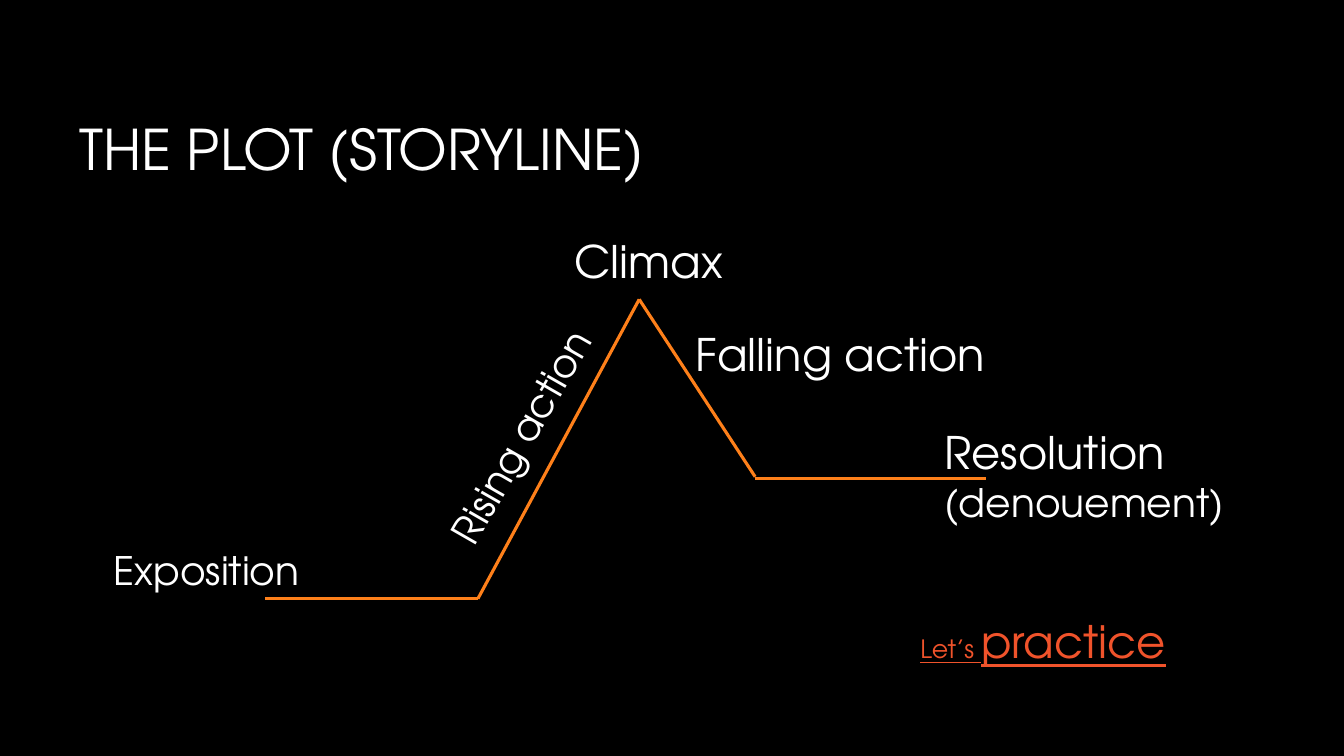
from lxml import etree
from pptx import Presentation
from pptx.dml.color import RGBColor
from pptx.enum.shapes import MSO_CONNECTOR as Conn
from pptx.enum.text import MSO_ANCHOR as Anchor
from pptx.oxml.ns import qn
from pptx.util import Inches, Pt

FONT = "TeX Gyre Adventor"
BLACK = RGBColor(0x00, 0x00, 0x00)
WHITE = RGBColor(0xFF, 0xFF, 0xFF)
ORANGE = RGBColor(0xFE, 0x80, 0x1A)
RED = RGBColor(0xF0, 0x53, 0x2B)


def add_text(slide, box, *runs, color=WHITE, line=None, turn=0,
             under=None, anchor=Anchor.TOP):
    """Add a one-paragraph text box; each run is (words, size)."""
    shape = slide.shapes.add_textbox(*map(Inches, box))
    shape.rotation = turn
    frame = shape.text_frame
    frame.word_wrap = True
    frame.vertical_anchor = anchor
    para = frame.paragraphs[0]
    para.line_spacing = line
    for words, size in runs:
        if words.startswith("\n"):
            para.add_line_break()
        run = para.add_run()
        run.text = words.strip("\n")
        font = run.font
        font.name, font.size = FONT, Pt(size)
        font.color.rgb = color
        font.underline = under


def add_line(slide, start, end):
    """Draw one stretch of the plot line."""
    line = slide.shapes.add_connector(
        Conn.STRAIGHT, *map(Inches, (*start, *end)))
    line.line.color.rgb = ORANGE
    line.line.width = Pt(2.25)
    etree.SubElement(line._element.spPr, qn("a:effectLst"))


def main():
    deck = Presentation()
    deck.slide_width, deck.slide_height = Inches(13.33), Inches(7.5)
    slide = deck.slides.add_slide(deck.slide_layouts[6])
    fill = slide.background.fill
    fill.solid()
    fill.fore_color.rgb = BLACK

    # Title
    add_text(slide, (0.69, 0.81, 9.42, 1.41), ("THE PLOT (STORYLINE)", 40),
             line=0.9, anchor=Anchor.MIDDLE)

    # Plot line
    base, peak = (4.74, 5.94), (6.34, 2.97)
    add_line(slide, (2.63, 5.94), base)
    add_line(slide, base, peak)
    add_line(slide, peak, (7.49, 4.73))
    add_line(slide, (7.49, 4.75), (9.78, 4.75))

    # Call to practice
    add_text(slide, (9.03, 6.04, 3.15, 0.64), ("Let’s ", 18),
             ("practice", 32), color=RED, under=True)

    # Stage labels
    add_text(slide, (1.03, 5.37, 2.56, 0.57), ("Exposition", 28))
    add_text(slide, (3.74, 3.79, 3.14, 0.57), ("Rising action", 28),
             turn=299.8)
    add_text(slide, (5.6, 2.27, 2.9, 0.64), ("Climax", 32))
    add_text(slide, (6.8, 3.19, 3.46, 0.64), ("Falling action", 32))
    add_text(slide, (9.27, 4.16, 3.61, 1.11), ("Resolution", 32),
             ("\n(denouement)", 28))

    deck.save("out.pptx")


if __name__ == "__main__":
    main()
